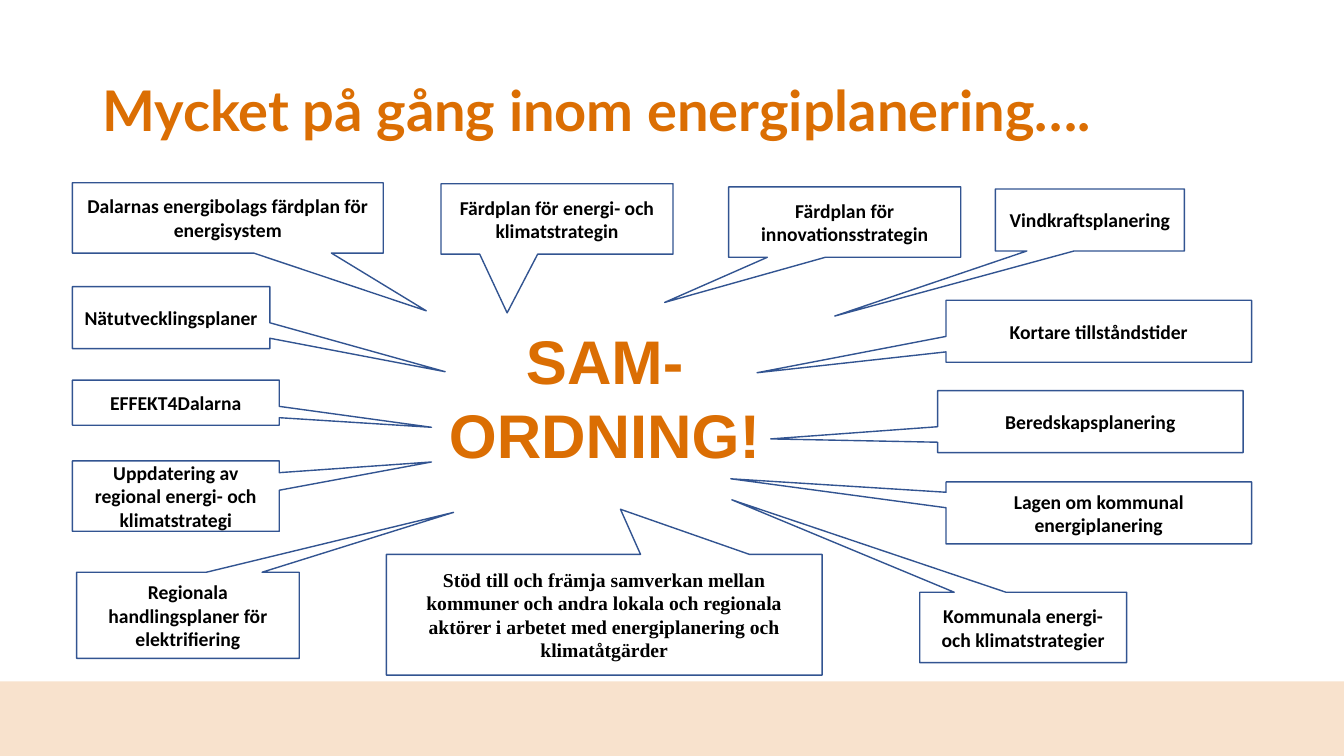
from pptx import Presentation
from pptx.dml.color import RGBColor
from pptx.enum.shapes import MSO_SHAPE as Kind
from pptx.enum.text import MSO_ANCHOR as Anchor, MSO_AUTO_SIZE as Fit, PP_ALIGN as Align
from pptx.util import Pt

PX = 9525
ORANGE = "DB6E03"


def paint(color, hue):
    color.rgb = RGBColor.from_string(hue)


def write(shape, text, face, size, hue, align):
    frame = shape.text_frame
    frame.text = text
    frame.word_wrap = True
    frame.auto_size = Fit.NONE
    frame.vertical_anchor = Anchor.MIDDLE
    para = frame.paragraphs[0]
    para.alignment = align
    for run in para.runs:
        run.font.name = face
        run.font.size = Pt(size)
        run.font.bold = True
        paint(run.font.color, hue)


deck = Presentation()
deck.slide_width = 1280 * PX
deck.slide_height = 720 * PX
slide = deck.slides.add_slide(deck.slide_layouts[5])
shapes = slide.shapes

band = shapes.add_shape(Kind.RECTANGLE, 0, 649 * PX, 1280 * PX, 71 * PX)
band.shadow.inherit = False
band.fill.solid()
paint(band.fill.fore_color, "F8E2CD")
band.line.fill.background()

title = shapes.title
title.left, title.top, title.width, title.height = 88 * PX, 38 * PX, 1104 * PX, 139 * PX
write(title, "Mycket på gång inom energiplanering….", "Lato", 40, ORANGE, Align.LEFT)
title.text_frame.paragraphs[0].line_spacing = 0.9

SANS, SERIF = "Calibri", "Times New Roman"
plans = [
    ("Dalarnas energibolags färdplan för energisystem", SANS, (69, 174, 296, 67), (406, 296)),
    ("Färdplan för energi- och klimatstrategin", SANS, (420, 175, 221, 67), (483, 298)),
    ("Färdplan för innovationsstrategin", SANS, (694, 178, 221, 67), (633, 288)),
    ("Vindkraftsplanering", SANS, (948, 180, 180, 59), (795, 301)),
    ("EFFEKT4Dalarna", SANS, (69, 362, 197, 43), (411, 407)),
    ("Nätutvecklingsplaner", SANS, (69, 273, 188, 59), (424, 354)),
    ("Regionala handlingsplaner för elektrifiering", SANS, (73, 545, 212, 82), (432, 488)),
    ("Stöd till och främja samverkan mellan kommuner och andra lokala och regionala "
     "aktörer i arbetet med energiplanering och klimatåtgärder",
     SERIF, (368, 528, 415, 115), (591, 485)),
    ("Kommunala energi- och klimatstrategier", SANS, (876, 564, 197, 67), (697, 476)),
    ("Beredskapsplanering", SANS, (893, 372, 291, 59), (734, 418)),
    ("Kortare tillståndstider", SANS, (901, 286, 291, 59), (721, 355)),
    ("Lagen om kommunal energiplanering", SANS, (901, 459, 291, 59), (696, 456)),
    ("Uppdatering av regional energi- och klimatstrategi", SANS, (69, 439, 197, 67), (411, 440)),
]
for text, face, (x, y, w, h), (tip_x, tip_y) in plans:
    plan = shapes.add_shape(Kind.RECTANGULAR_CALLOUT, x * PX, y * PX, w * PX, h * PX)
    plan.adjustments[0] = (tip_x - x) / w - 0.5
    plan.adjustments[1] = (tip_y - y) / h - 0.5
    plan.shadow.inherit = False
    plan.fill.background()
    paint(plan.line.color, "325491")
    plan.line.width = Pt(1)
    write(plan, text, face, 14, "000000", Align.CENTER)

core = shapes.add_textbox(415 * PX, 302 * PX, 322 * PX, 152 * PX)
write(core, "SAM-\vORDNING!", "Arial", 44, ORANGE, Align.CENTER)

deck.save("out.pptx")
